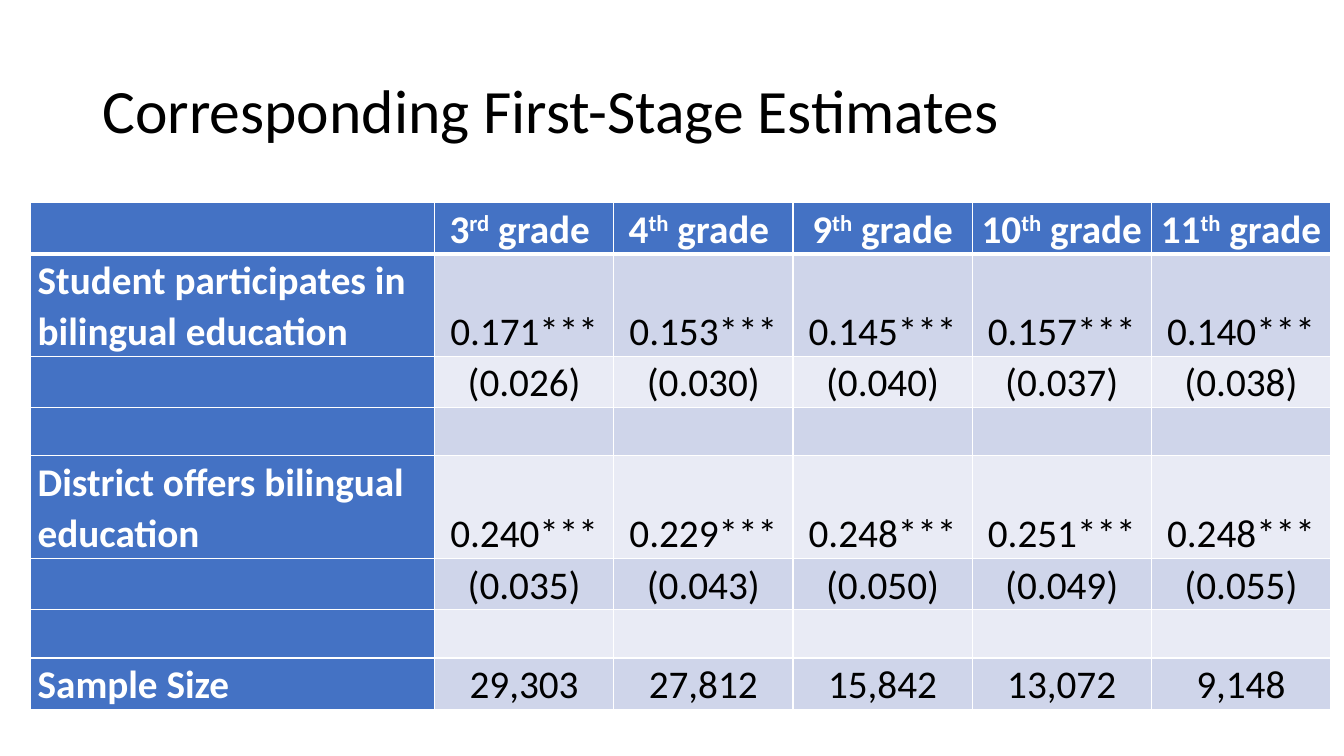
from lxml.etree import SubElement as Sub
from pptx import Presentation
from pptx.dml.color import RGBColor
from pptx.enum.text import MSO_ANCHOR as Anchor, MSO_AUTO_SIZE as Auto, PP_ALIGN as Align
from pptx.oxml.ns import qn
from pptx.util import Cm, Pt

BLUE, WHITE, BLACK = "4472C4", "FFFFFF", "000000"
BANDS = ["E9EBF5", "CFD5EA"]
HEADS = [("3", "rd", " grade "), ("4", "th", " grade "), ("9", "th", " grade"),
         ("10", "th", " grade"), ("11", "th", " grade")]
ROWS = [
    ("Student participates in bilingual education",
     "0.171***", "0.153***", "0.145***", "0.157***", "0.140***"),
    ("", "(0.026)", "(0.030)", "(0.040)", "(0.037)", "(0.038)"),
    ("",) * 6,
    ("District offers bilingual education",
     "0.240***", "0.229***", "0.248***", "0.251***", "0.248***"),
    ("", "(0.035)", "(0.043)", "(0.050)", "(0.049)", "(0.055)"),
    ("",) * 6,
    ("Sample Size", "29,303", "27,812", "15,842", "13,072", "9,148"),
]
HIGH = [1.29, 2.58, 1.29, 1.22, 2.58, 1.29, 1.22, 1.29]


def paint(color, code):
    """Set a fill or font colour from a hex string."""
    color.rgb = RGBColor.from_string(code)


def write(par, text, size, code, bold=False, base=0):
    """Add one run to a paragraph."""
    run = par.add_run()
    run.text = text
    font = run.font
    font.name, font.size, font.bold = "Calibri", Pt(size), bold
    paint(font.color, code)
    if base:
        run._r.get_or_add_rPr().set("baseline", str(base * 1000))


def edge(cell, head):
    """Draw white borders, with a thick one below the head row."""
    props = cell._tc.get_or_add_tcPr()
    for side in "LRTB":
        wide = 3 if head and side == "B" else 1
        line = Sub(props, qn(f"a:ln{side}"), w=str(Pt(wide)))
        Sub(Sub(line, qn("a:solidFill")), qn("a:srgbClr"), val=WHITE)


def fill(cell, parts, row, col):
    """Style one table cell and write its parts, the second one raised."""
    dark = row == 0 or col == 0
    edge(cell, row == 0)
    cell.fill.solid()
    paint(cell.fill.fore_color, BLUE if dark else BANDS[row % 2])
    if not any(parts):
        return
    cell.margin_left = cell.margin_right = Cm(0.19)
    cell.margin_top = cell.margin_bottom = 0
    cell.vertical_anchor = Anchor.TOP if dark else Anchor.BOTTOM
    par = cell.text_frame.paragraphs[0]
    par.alignment = Align.CENTER if col else Align.LEFT
    par.line_spacing = 1.07
    for spot, text in enumerate(parts):
        write(par, text, 28, WHITE if dark else BLACK, dark, 30 if spot == 1 else 0)


def title(slide, left, top, width, height):
    """Place the slide title in the given box."""
    shape = slide.shapes.title
    shape.left, shape.top = Cm(left), Cm(top)
    shape.width, shape.height = Cm(width), Cm(height)
    frame = shape.text_frame
    frame.auto_size, frame.vertical_anchor = Auto.NONE, Anchor.MIDDLE
    par = frame.paragraphs[0]
    par.alignment, par.line_spacing = Align.LEFT, 0.9
    write(par, "Corresponding First-Stage Estimates", 44, BLACK)


def grid(slide, left, top, width, first):
    """Place the table of estimates, its grade columns sharing the width."""
    data = [[("",), *HEADS]] + [[(text,) for text in row] for row in ROWS]
    table = slide.shapes.add_table(len(data), len(data[0]), Cm(left), Cm(top),
                                   Cm(width), Cm(sum(HIGH))).table
    table.first_col = True
    for col, item in enumerate(table.columns):
        item.width = Cm((width - first) / len(HEADS) if col else first)
    for row, cells in enumerate(data):
        table.rows[row].height = Cm(HIGH[row])
        for col, parts in enumerate(cells):
            fill(table.cell(row, col), parts, row, col)


def main():
    """Build and save the slide."""
    deck = Presentation()
    deck.slide_width, deck.slide_height = Cm(33.87), Cm(19.05)
    slide = deck.slides.add_slide(deck.slide_layouts[5])
    title(slide, 2.33, 1.01, 29.21, 3.68)
    grid(slide, 0.76, 5.1, 32.77, 10.19)
    deck.save("out.pptx")


if __name__ == "__main__":
    main()
